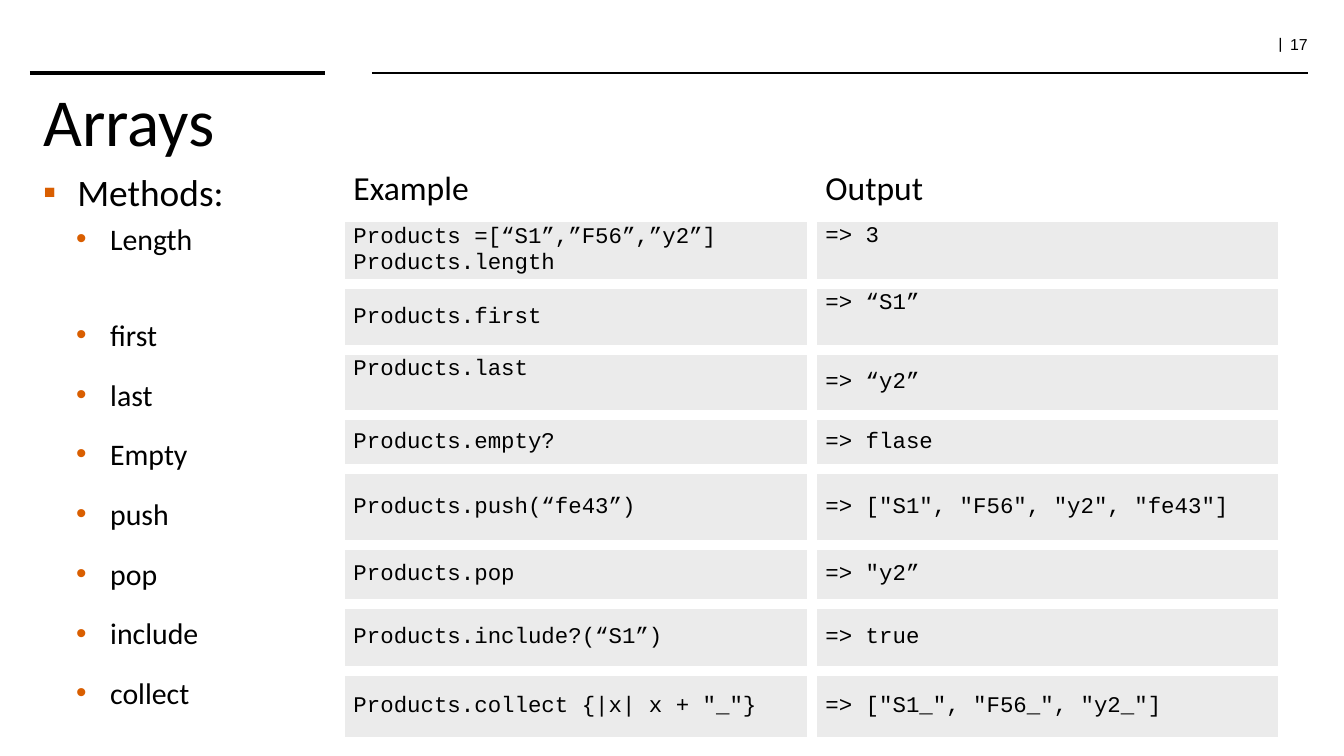
import dataclasses
import typing
import pptx
import pptx.util
import pptx.oxml
import pptx.oxml.ns
import pptx.dml.color
import pptx.enum.text
import pptx.enum.shapes

SCALE = 914400 / 134.4
INK = {"text": "000000", "bullet": "D95E00", "cell": "EBEBEB", "edge": "FFFFFF"}
SANS, MONO = "Calibri", "Courier New"
TOP = pptx.enum.text.MSO_ANCHOR.TOP
MID = pptx.enum.text.MSO_ANCHOR.MIDDLE


@dataclasses.dataclass
class Rule:
    left: int
    right: int
    width: float


@dataclasses.dataclass
class Item:
    text: str
    size: int = 16
    mark: str = "•"
    indent: int = 67
    lead: float = 1.5
    before: float = 3.2
    after: float = 0


@dataclasses.dataclass
class Row:
    height: int
    code: typing.List[str]
    out: str
    code_at: typing.Any = MID
    out_at: typing.Any = MID


RULES = [Rule(30, 325, 2), Rule(372, 1308, 1)]
ITEMS = [
    Item("Methods:", 20, "▪", 34, 1, 0),
    Item("Length", lead=1, after=19.5),
    *[Item(name) for name in
      ("first", "last", "Empty", "push", "pop", "include", "collect")],
]
ROWS = [
    Row(66, ["Products =[“S1”,”F56”,”y2”]", "Products.length"], "=> 3", out_at=TOP),
    Row(66, ["Products.first"], "=> “S1”", out_at=TOP),
    Row(65, ["Products.last"], "=> “y2”", code_at=TOP),
    Row(54, ["Products.empty?"], "=> flase"),
    Row(76, ["Products.push(“fe43”)"], '=> ["S1", "F56", "y2", "fe43"]'),
    Row(59, ["Products.pop"], '=> "y2”'),
    Row(67, ["Products.include?(“S1”)"], "=> true"),
    Row(71, ['Products.collect {|x| x + "_"}'], '=> ["S1_", "F56_", "y2_"]'),
]


def px(count: int) -> int:
    return round(count * SCALE)


def tint(name: str):
    return pptx.dml.color.RGBColor.from_string(INK[name])


def node(parent, tag: str, **attrs: str):
    part = pptx.oxml.parse_xml(f"<{tag} {pptx.oxml.ns.nsdecls('a')}/>")
    for key, value in attrs.items():
        part.set(key, value)
    parent.append(part)
    return part


def add_run(para, text: str, size: float, face: str) -> None:
    run = para.add_run()
    run.text = text
    run.font.size = pptx.util.Pt(size)
    run.font.name = face
    run.font.bold = False
    run.font.color.rgb = tint("text")


def add_box(slide, left: int, top: int, width: int, height: int):
    frame = slide.shapes.add_textbox(px(left), px(top), px(width), px(height)).text_frame
    frame.word_wrap = True
    return frame


def draw_rule(slide, rule: Rule) -> None:
    line = slide.shapes.add_connector(
        pptx.enum.shapes.MSO_CONNECTOR.STRAIGHT,
        px(rule.left), px(73), px(rule.right), px(73))
    line.line.color.rgb = tint("text")
    line.line.width = pptx.util.Pt(rule.width)
    node(line._element.spPr, "a:effectLst")


def draw_title(slide) -> None:
    title = slide.shapes.title
    title.left, title.top, title.width, title.height = px(30), px(73), px(1278), px(77)
    frame = title.text_frame
    frame.auto_size = pptx.enum.text.MSO_AUTO_SIZE.NONE
    frame.vertical_anchor = TOP
    para = frame.paragraphs[0]
    para.alignment = pptx.enum.text.PP_ALIGN.LEFT
    add_run(para, "Arrays", 36, SANS)


def draw_page(slide) -> None:
    para = add_box(slide, 1184, 31, 137, 30).paragraphs[0]
    para.alignment = pptx.enum.text.PP_ALIGN.RIGHT
    para.line_spacing = 0.8
    add_run(para, "| ", 9, "TeX Gyre Schola")
    add_run(para, "17", 8.5, "Arial")


def draw_list(slide, items: typing.List[Item]) -> None:
    frame = add_box(slide, 30, 163, 310, 493)
    for index, item in enumerate(items):
        para = frame.add_paragraph() if index else frame.paragraphs[0]
        props = para._p.get_or_add_pPr()
        props.set("marL", str(px(item.indent)))
        props.set("indent", str(-px(34)))
        node(node(props, "a:buClr"), "a:srgbClr", val=INK["bullet"])
        node(props, "a:buFont", typeface="Arial")
        node(props, "a:buChar", char=item.mark)
        para.level = 1 if index else 0
        para.line_spacing = item.lead
        para.space_before = pptx.util.Pt(item.before)
        para.space_after = pptx.util.Pt(item.after)
        add_run(para, item.text, item.size, SANS)


def fill_cell(cell, lines: typing.List[str], size: int, face: str,
              anchor, shade: bool) -> None:
    props = cell._tc.get_or_add_tcPr()
    for side in ("lnL", "lnR", "lnT", "lnB"):
        edge = node(props, f"a:{side}", w=str(pptx.util.Pt(6)))
        node(node(edge, "a:solidFill"), "a:srgbClr", val=INK["edge"])
    if shade:
        cell.fill.solid()
        cell.fill.fore_color.rgb = tint("cell")
    else:
        cell.fill.background()
    cell.vertical_anchor = anchor
    for index, text in enumerate(lines):
        frame = cell.text_frame
        para = frame.add_paragraph() if index else frame.paragraphs[0]
        add_run(para, text, size, face)


def draw_table(slide, rows: typing.List[Row]) -> None:
    head = 55
    total = head + sum(row.height for row in rows)
    table = slide.shapes.add_table(
        len(rows) + 1, 2, px(340), px(162), px(943), px(total)).table
    table.first_row = table.horz_banding = False
    table.columns[0].width, table.columns[1].width = px(472), px(471)
    table.rows[0].height = px(head)
    for col, name in enumerate(("Example", "Output")):
        fill_cell(table.cell(0, col), [name], 18, SANS, TOP, False)
    for index, row in enumerate(rows, 1):
        table.rows[index].height = px(row.height)
        fill_cell(table.cell(index, 0), row.code, 12, MONO, row.code_at, True)
        fill_cell(table.cell(index, 1), [row.out], 12, MONO, row.out_at, True)


def main() -> None:
    deck = pptx.Presentation()
    deck.slide_width, deck.slide_height = px(1344), px(756)
    slide = deck.slides.add_slide(deck.slide_layouts[5])
    draw_page(slide)
    for rule in RULES:
        draw_rule(slide, rule)
    draw_title(slide)
    draw_list(slide, ITEMS)
    draw_table(slide, ROWS)
    deck.save("out.pptx")


if __name__ == "__main__":
    main()
